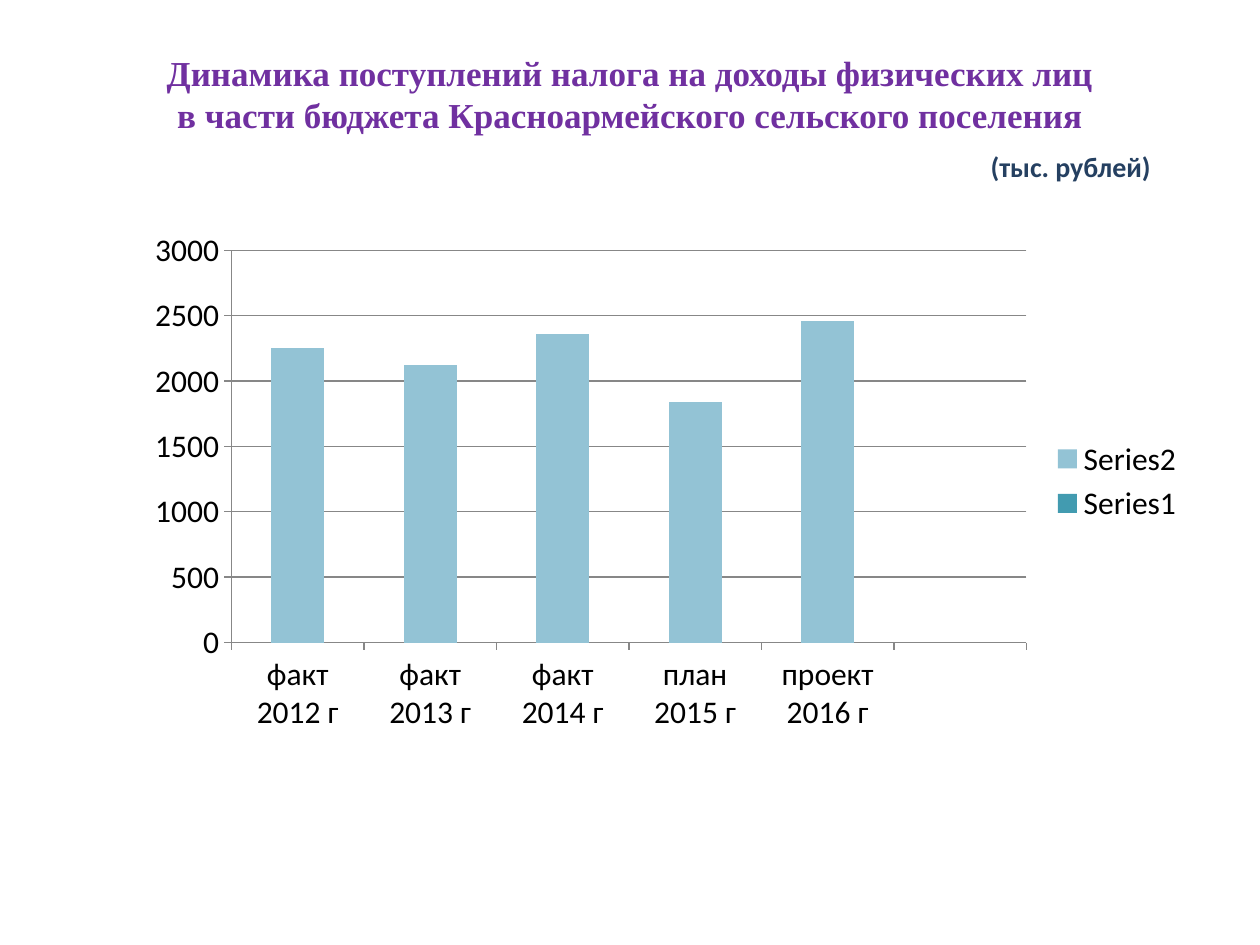
from pptx import Presentation
from pptx import util as u
from pptx.chart.data import CategoryChartData
from pptx.dml.color import RGBColor
from pptx.enum import chart as ch, text as tx

PURPLE = RGBColor(0x70, 0x30, 0xA0)
NAVY = RGBColor(0x25, 0x40, 0x61)
BLACK = RGBColor(0, 0, 0)
GRAY = RGBColor(0x87, 0x87, 0x87)
TEAL = RGBColor(0x42, 0x9B, 0xB0)
PALE = RGBColor(0x93, 0xC3, 0xD5)

deck = Presentation()
deck.slide_width, deck.slide_height = u.Cm(25.4), u.Cm(19.05)
slide = deck.slides.add_slide(deck.slide_layouts[6])


def write(words, left, top, width, height, font, size, color, align):
    box = slide.shapes.add_textbox(u.Cm(left), u.Cm(top), u.Cm(width), u.Cm(height))
    frame = box.text_frame
    frame.word_wrap = True
    frame.vertical_anchor = tx.MSO_ANCHOR.MIDDLE
    frame.text = words
    for para in frame.paragraphs:
        para.alignment = align
        para.font.name = font
        para.font.size = u.Pt(size)
        para.font.bold = True
        para.font.color.rgb = color


write("Динамика поступлений налога на доходы физических лиц\n"
      "в части бюджета Красноармейского сельского поселения",
      left=1.27, top=0.76, width=22.86, height=2.27, font="Times New Roman",
      size=20, color=PURPLE, align=tx.PP_ALIGN.CENTER)
write("(тыс. рублей)", left=17.45, top=2.85, width=6, height=1, font="Calibri",
      size=16, color=NAVY, align=tx.PP_ALIGN.RIGHT)

data = CategoryChartData()
data.categories = ["факт 2012 г", "факт 2013 г", "факт 2014 г",
                   "план 2015 г", "проект 2016 г", ""]
data.add_series("Series1", [None] * 6)
data.add_series("Series2", [2250, 2120, 2360, 1840, 2460, None])
chart = slide.shapes.add_chart(
    ch.XL_CHART_TYPE.COLUMN_STACKED, u.Cm(2.7), u.Cm(4.45),
    u.Cm(21.43), u.Cm(10.5), data).chart
chart.has_title = False
chart.font.name = "Calibri"
chart.font.size = u.Pt(18)
chart.font.color.rgb = BLACK
chart.has_legend = True
chart.legend.position = ch.XL_LEGEND_POSITION.RIGHT
chart.legend.include_in_layout = False

plot = chart.plots[0]
plot.gap_width = 150
plot.overlap = 100
plot.vary_by_categories = False
for row, color in zip(plot.series, (TEAL, PALE)):
    row.format.fill.solid()
    row.format.fill.fore_color.rgb = color

scale = chart.value_axis
scale.minimum_scale, scale.maximum_scale, scale.major_unit = 0, 3000, 500
scale.has_major_gridlines = True
for axis in (chart.category_axis, scale):
    axis.major_tick_mark = ch.XL_TICK_MARK.OUTSIDE
for part in (chart.category_axis, scale, scale.major_gridlines):
    part.format.line.color.rgb = GRAY
    part.format.line.width = u.Pt(0.75)

deck.save("out.pptx")
